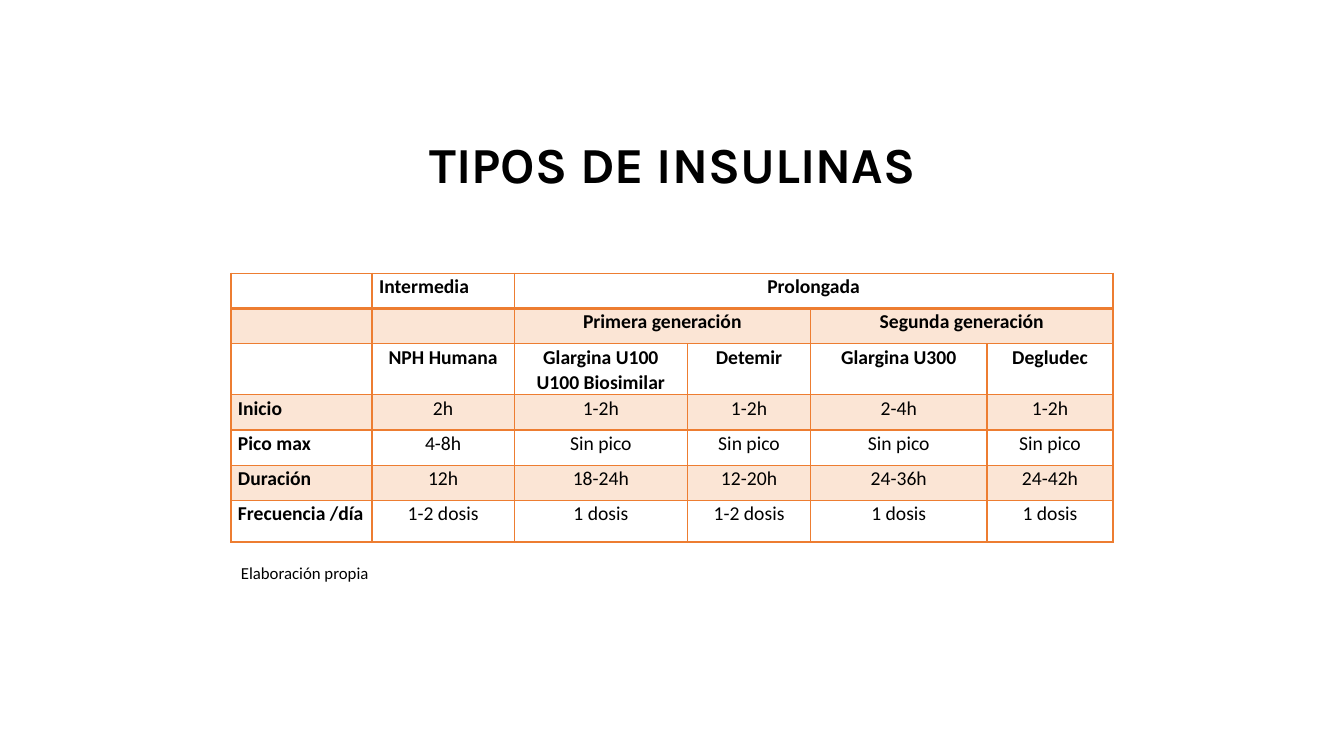
from dataclasses import dataclass

from lxml import etree
from pptx import Presentation
from pptx.dml.color import RGBColor
from pptx.enum.text import MSO_ANCHOR, MSO_AUTO_SIZE, PP_ALIGN
from pptx.oxml.ns import qn
from pptx.util import Inches, Pt

LEFT, CENTER = PP_ALIGN.LEFT, PP_ALIGN.CENTER
MIDDLE = MSO_ANCHOR.MIDDLE
GROW = MSO_AUTO_SIZE.SHAPE_TO_FIT_TEXT
TITLE_ONLY = 5


@dataclass(frozen=True)
class Theme:
    ink: str = "000000"
    accent: str = "ED7D31"
    band_opacity: int = 20
    title_font: str = "Karla"
    body_font: str = "Calibri"
    title_size: int = 36
    table_size: int = 14
    note_size: int = 12
    line_spacing: float = 1.07


THEME = Theme()

COLUMN_WIDTHS = [1.4, 1.41, 1.72, 1.22, 1.75, 1.25]
ROW_HEIGHTS = [0.35, 0.35, 0.49, 0.35, 0.35, 0.35, 0.41]
HEADER_ROWS = 3
INSULINS = [
    ["", "Intermedia", "Prolongada", "", "", ""],
    ["", "", "Primera generación", "", "Segunda generación", ""],
    ["", "NPH Humana", "Glargina U100\nU100 Biosimilar", "Detemir",
     "Glargina U300", "Degludec"],
    ["Inicio", "2h", "1-2h", "1-2h", "2-4h", "1-2h"],
    ["Pico max", "4-8h"] + ["Sin pico"] * 4,
    ["Duración", "12h", "18-24h", "12-20h", "24-36h", "24-42h"],
    ["Frecuencia /día", "1-2 dosis", "1 dosis", "1-2 dosis", "1 dosis", "1 dosis"],
]
# (row, first column, last column)
MERGES = [(0, 2, 5), (1, 2, 3), (1, 4, 5)]


def apply_format(target, values):
    for name, value in values.items():
        setattr(target, name, value)


def write_text(frame, text, font, size, bold=False, **paragraph_format):
    """Write one paragraph for each line of text."""
    for index, line in enumerate(text.split("\n")):
        para = frame.add_paragraph() if index else frame.paragraphs[0]
        apply_format(para, paragraph_format)
        span = para.add_run()
        span.text = line
        apply_format(span.font, {"name": font, "size": Pt(size), "bold": bold})
        span.font.color.rgb = RGBColor.from_string(THEME.ink)


def add_borders(cell, widths):
    """Draw the borders; widths maps the sides L, R, T and B to points."""
    properties = cell._tc.get_or_add_tcPr()
    for side, width in widths.items():
        line = etree.SubElement(properties, qn(f"a:ln{side}"), w=str(Pt(width)))
        fill = etree.SubElement(line, qn("a:solidFill"))
        etree.SubElement(fill, qn("a:srgbClr"), val=THEME.accent)


def fill_cell(cell, banded):
    if not banded:
        cell.fill.background()
        return
    cell.fill.solid()
    cell.fill.fore_color.rgb = RGBColor.from_string(THEME.accent)
    color = cell._tc.tcPr.find(qn("a:solidFill")).find(qn("a:srgbClr"))
    etree.SubElement(color, qn("a:alpha"), val=str(THEME.band_opacity * 1000))


def add_title(page, text):
    title = page.shapes.title
    apply_format(title, {"left": Inches(0.92), "top": Inches(0.93),
                         "width": Inches(11.5), "height": Inches(1.45)})
    title.text_frame.vertical_anchor = MIDDLE
    write_text(title.text_frame, text, THEME.title_font, THEME.title_size,
               bold=True, alignment=CENTER, line_spacing=0.9)


def add_insulin_table(page):
    table = page.shapes.add_table(
        len(ROW_HEIGHTS), len(COLUMN_WIDTHS), Inches(2.29), Inches(2.71),
        Inches(sum(COLUMN_WIDTHS)), Inches(sum(ROW_HEIGHTS))).table
    apply_format(table, {"first_row": False, "horz_banding": False})
    for column, width in zip(table.columns, COLUMN_WIDTHS):
        column.width = Inches(width)
    for row, height in zip(table.rows, ROW_HEIGHTS):
        row.height = Inches(height)
    for row, first, last in MERGES:
        table.cell(row, first).merge(table.cell(row, last))

    for row, texts in enumerate(INSULINS):
        for column, text in enumerate(texts):
            cell = table.cell(row, column)
            add_borders(cell, {"L": 1, "R": 1, "T": 1, "B": 1 if row else 2})
            fill_cell(cell, banded=row % 2 == 1)
            apply_format(cell, {"margin_left": Inches(0.07), "margin_right": Inches(0.07),
                                "margin_top": 0, "margin_bottom": 0})
            if text:
                starts_left = column == 0 or (row, column) == (0, 1)
                write_text(cell.text_frame, text, THEME.body_font, THEME.table_size,
                           bold=row < HEADER_ROWS or column == 0,
                           alignment=LEFT if starts_left else CENTER,
                           line_spacing=THEME.line_spacing)


def add_note(page, text):
    box = page.shapes.add_textbox(Inches(2.29), Inches(5.52), Inches(1.48), Inches(0.31))
    apply_format(box.text_frame, {"word_wrap": False, "auto_size": GROW})
    write_text(box.text_frame, text, THEME.body_font, THEME.note_size,
               line_spacing=THEME.line_spacing, space_after=Pt(8))


def main():
    deck = Presentation()
    apply_format(deck, {"slide_width": Inches(13.33), "slide_height": Inches(7.5)})
    page = deck.slides.add_slide(deck.slide_layouts[TITLE_ONLY])
    add_title(page, "TIPOS DE INSULINAS")
    add_insulin_table(page)
    add_note(page, "Elaboración propia")
    deck.save("out.pptx")


if __name__ == "__main__":
    main()
